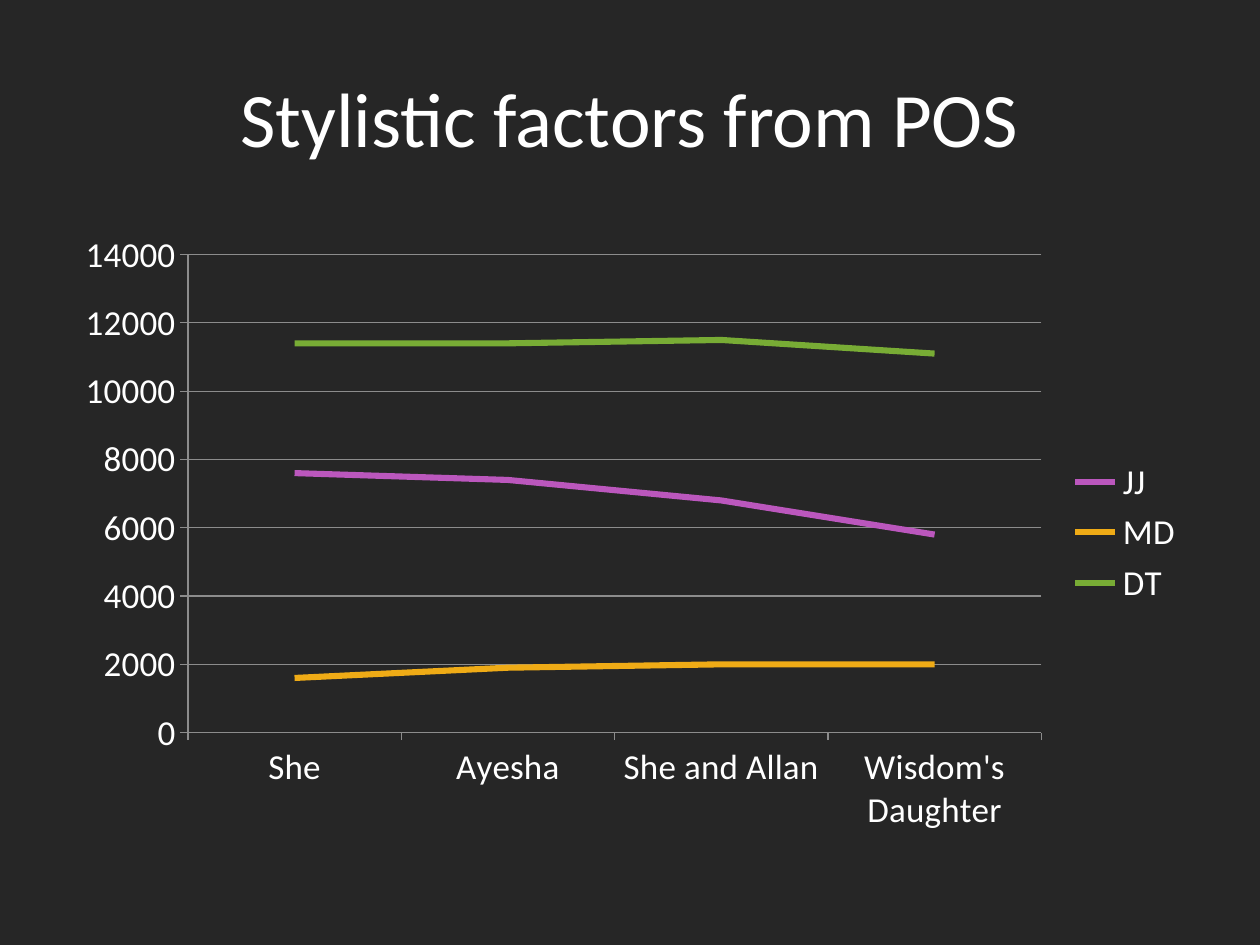
from dataclasses import dataclass

from pptx import Presentation
from pptx import util as u
from pptx.chart import data as cd
from pptx.dml.color import RGBColor
from pptx.enum import chart as ch, text


@dataclass(frozen=True)
class Theme:
    font: str = "Calibri"
    background: str = "262626"
    ink: str = "FFFFFF"
    rule: str = "8C8C8C"
    series: tuple = ("BB57BD", "EFAB16", "78AC35")
    title_size: int = 44
    chart_size: int = 20
    rule_width: float = 0.75
    series_width: float = 3.5


class Deck:
    def __init__(self, prs, theme):
        self.theme = theme
        self.s = prs.slides.add_slide(prs.slide_layouts[6])
        fill = self.s.background.fill
        fill.solid()
        fill.fore_color.rgb = RGBColor.from_string(theme.background)

    def font(self, font, size):
        font.name = self.theme.font
        font.size = u.Pt(size)
        font.bold = False
        font.color.rgb = RGBColor.from_string(self.theme.ink)

    def line(self, line, color, width):
        line.color.rgb = RGBColor.from_string(color)
        line.width = u.Pt(width)

    def title(self, words, box):
        sp = self.s.shapes.add_textbox(*map(u.Inches, box))
        tf = sp.text_frame
        tf.word_wrap = True
        tf.vertical_anchor = text.MSO_ANCHOR.MIDDLE
        p = tf.paragraphs[0]
        p.alignment = text.PP_ALIGN.CENTER
        r = p.add_run()
        r.text = words
        self.font(r.font, self.theme.title_size)

    def axis(self, axis):
        axis.major_tick_mark = ch.XL_TICK_MARK.OUTSIDE
        axis.minor_tick_mark = ch.XL_TICK_MARK.NONE
        self.line(axis.format.line, self.theme.rule, self.theme.rule_width)

    def line_chart(self, categories, series, box, top, step):
        data = cd.CategoryChartData()
        data.categories = categories
        for name, values in series.items():
            data.add_series(name, values)
        chart = self.s.shapes.add_chart(
            ch.XL_CHART_TYPE.LINE, *map(u.Inches, box), data).chart
        self.font(chart.font, self.theme.chart_size)
        chart.has_title = False
        chart.has_legend = True
        chart.legend.position = ch.XL_LEGEND_POSITION.RIGHT
        chart.legend.include_in_layout = False
        for axis in (chart.category_axis, chart.value_axis):
            self.axis(axis)
        scale = chart.value_axis
        scale.minimum_scale, scale.maximum_scale, scale.major_unit = 0, top, step
        scale.has_major_gridlines = True
        self.line(scale.major_gridlines.format.line,
                  self.theme.rule, self.theme.rule_width)
        plot = chart.plots[0]
        plot.vary_by_categories = False
        for ser, color in zip(plot.series, self.theme.series):
            ser.smooth = False
            ser.marker.style = ch.XL_MARKER_STYLE.NONE
            self.line(ser.format.line, color, self.theme.series_width)


def main():
    prs = Presentation()
    prs.slide_width, prs.slide_height = u.Inches(10), u.Inches(7.5)
    deck = Deck(prs, Theme())
    deck.title("Stylistic factors from POS", (0.5, 0.3, 9, 1.25))
    deck.line_chart(
        ["She", "Ayesha", "She and Allan", "Wisdom's Daughter"],
        {
            "JJ": (7600, 7400, 6800, 5800),
            "MD": (1600, 1900, 2000, 2000),
            "DT": (11400, 11400, 11500, 11100),
        },
        (0.5, 1.75, 9, 4.95), top=14000, step=2000)
    prs.save("out.pptx")


if __name__ == "__main__":
    main()
